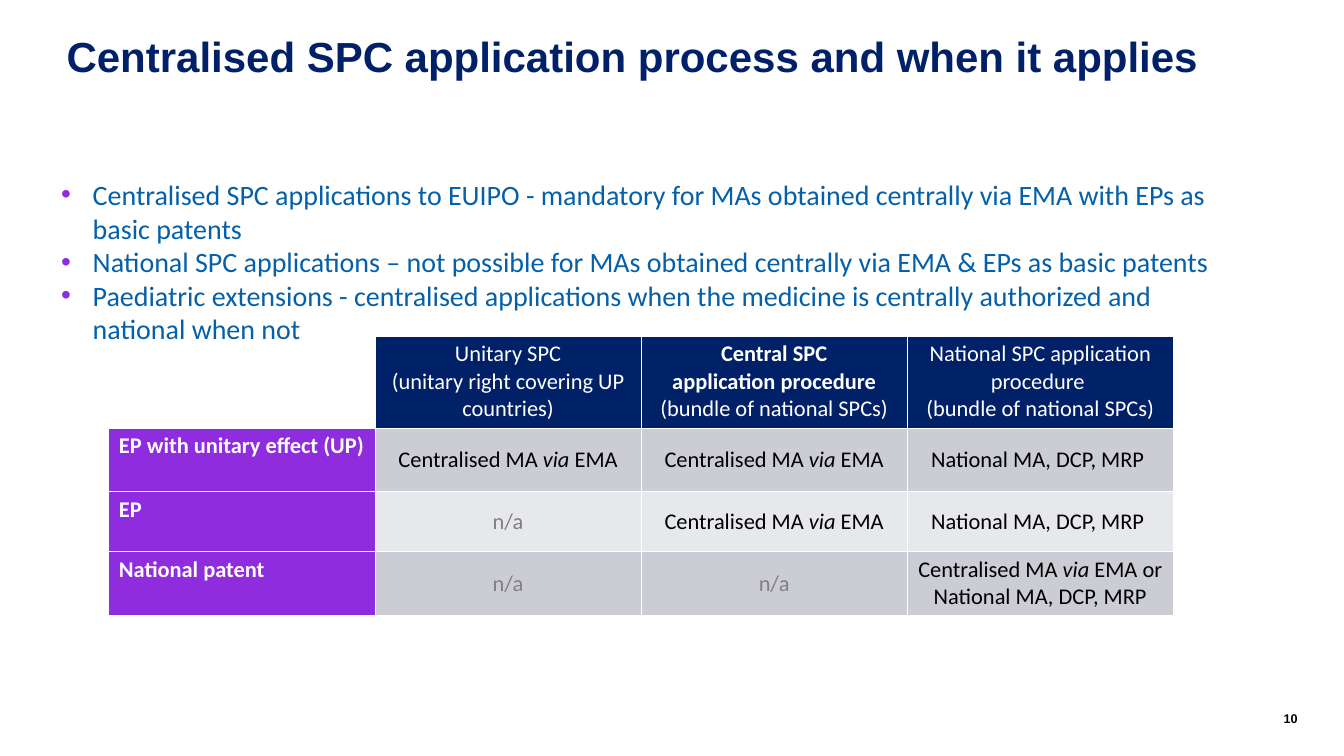
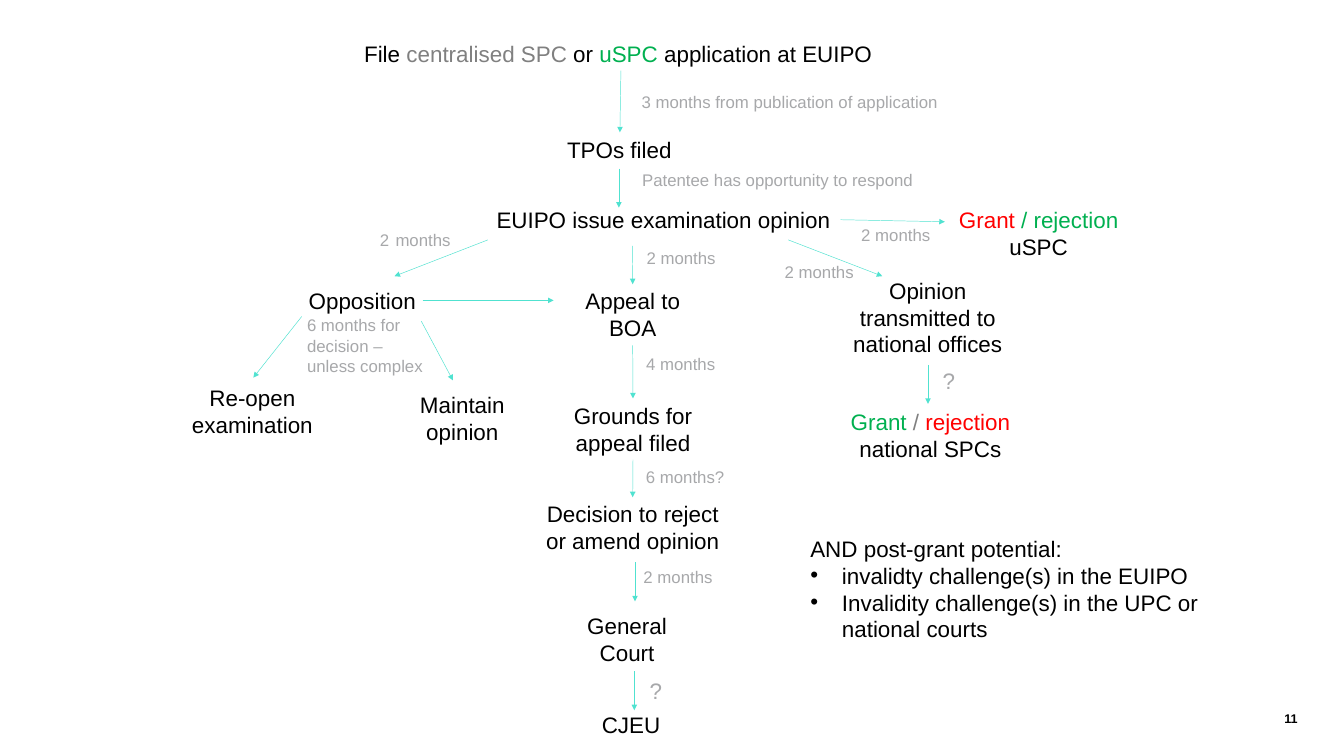
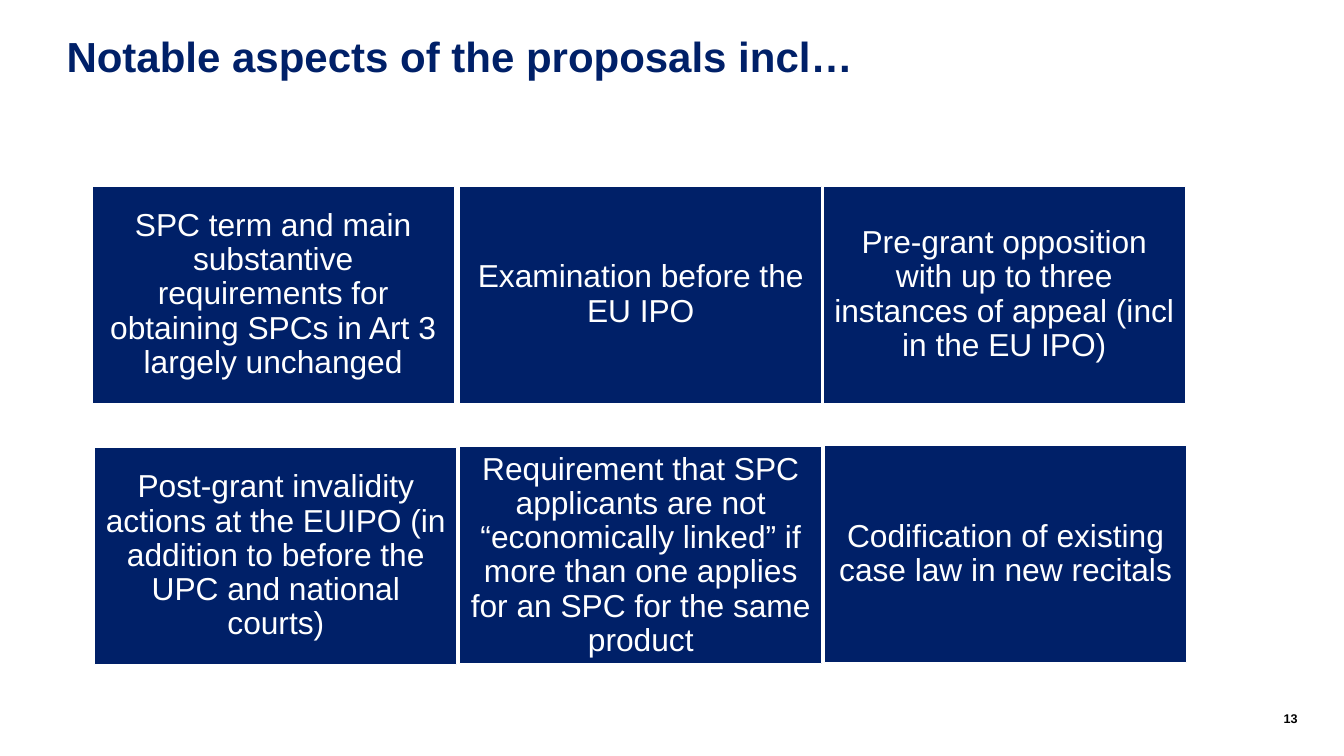
from dataclasses import dataclass, replace
from typing import NamedTuple, Optional

from pptx import Presentation
from pptx.dml.color import RGBColor
from pptx.enum.shapes import MSO_CONNECTOR, MSO_SHAPE
from pptx.enum.text import MSO_ANCHOR, MSO_AUTO_SIZE, PP_ALIGN
from pptx.oxml import parse_xml
from pptx.oxml.ns import nsdecls, qn
from pptx.util import Inches, Pt

NAVY = RGBColor(0x00, 0x20, 0x68)
BLUE = RGBColor(0x04, 0x60, 0xA9)
PURPLE = RGBColor(0x8F, 0x2D, 0xDE)
TURQUOISE = RGBColor(0x50, 0xE2, 0xD0)
GREEN = RGBColor(0x00, 0xB0, 0x50)
RED = RGBColor(0xFF, 0x00, 0x00)
GREY = RGBColor(0x80, 0x80, 0x80)
LABEL_GREY = RGBColor(0xA7, 0xA8, 0xAA)
DARK_BAND = RGBColor(0xCC, 0xCD, 0xD4)
LIGHT_BAND = RGBColor(0xE7, 0xE8, 0xEB)
BLACK = RGBColor(0x00, 0x00, 0x00)
WHITE = RGBColor(0xFF, 0xFF, 0xFF)

TITLE_AND_CONTENT, TITLE_ONLY, BLANK = 1, 5, 6
TOP, LEFT, BOTTOM, RIGHT = range(4)
BULLET_INDENT = Inches(0.47)


@dataclass(frozen=True)
class TextStyle:
    size: float
    color: RGBColor
    font: str = "Arial"
    bold: bool = False
    alignment: PP_ALIGN = PP_ALIGN.LEFT
    line_spacing: float = 1.0
    bullet: Optional[RGBColor] = None


class Run(NamedTuple):
    text: str
    color: Optional[RGBColor] = None
    bold: Optional[bool] = None
    italic: Optional[bool] = None
    size: Optional[float] = None


class Box(NamedTuple):
    left: float
    top: float
    width: float
    height: float


class Step(NamedTuple):
    box: Box
    runs: list
    wrap: bool = True


class Label(NamedTuple):
    box: Box
    runs: list
    style: TextStyle


class Joint(NamedTuple):
    step: str
    side: int


class Point(NamedTuple):
    x: float
    y: float


class Arrow(NamedTuple):
    start: Joint | Point
    end: Joint | Point


class Cell(NamedTuple):
    paragraphs: list
    style: TextStyle


TITLE = TextStyle(45, NAVY, bold=True, line_spacing=0.95)
PAGE_NUMBER = TextStyle(13.5, BLACK, bold=True, alignment=PP_ALIGN.RIGHT)
BODY = TextStyle(30, BLUE, "Calibri", bullet=PURPLE)
HEADER = TextStyle(24, WHITE, "Calibri", alignment=PP_ALIGN.CENTER)
ROW_HEADING = replace(HEADER, bold=True, alignment=PP_ALIGN.LEFT)
VALUE = replace(HEADER, color=BLACK)
UNAVAILABLE = replace(HEADER, color=GREY)
STEP = TextStyle(24, BLACK, alignment=PP_ALIGN.CENTER)
PLAIN = replace(STEP, alignment=PP_ALIGN.LEFT)
LIST = replace(PLAIN, bullet=BLACK)
DURATION = TextStyle(18, LABEL_GREY, alignment=PP_ALIGN.CENTER)
DURATION_NOTE = replace(DURATION, alignment=PP_ALIGN.LEFT)
UNKNOWN = replace(DURATION, size=24)
CARD = TextStyle(34, WHITE, alignment=PP_ALIGN.CENTER, line_spacing=0.9)

BODY_LINES = [
    "Centralised SPC applications to EUIPO - mandatory for MAs obtained centrally via EMA with EPs as basic patents",
    "National SPC applications – not possible for MAs obtained centrally via EMA & EPs as basic patents",
    "Paediatric extensions - centralised applications when the medicine is centrally authorized and national when not",
]

CENTRALISED = [Run("Centralised MA "), Run("via", italic=True), Run(" EMA")]
CENTRAL_CELL = Cell([CENTRALISED], VALUE)
NATIONAL_CELL = Cell([[Run("National MA, DCP, MRP ")]], VALUE)
NOT_APPLICABLE = Cell([[Run("n/a")]], UNAVAILABLE)
EITHER_CELL = Cell(
    [[*CENTRALISED[:2], Run(" EMA or")], [Run("National MA, DCP, MRP")]], VALUE
)
TABLE_HEADER = [
    Cell([[Run("Unitary SPC")], [Run("(unitary right covering UP countries)")]], HEADER),
    Cell(
        [
            [Run("Central SPC", bold=True)],
            [Run("application procedure ", bold=True), Run("(bundle of national SPCs)")],
        ],
        HEADER,
    ),
    Cell(
        [[Run("National SPC application procedure ")], [Run("(bundle of national SPCs)")]],
        HEADER,
    ),
]
TABLE_ROWS = [
    ("EP with unitary effect (UP)", [CENTRAL_CELL, CENTRAL_CELL, NATIONAL_CELL]),
    ("EP", [NOT_APPLICABLE, CENTRAL_CELL, NATIONAL_CELL]),
    ("National patent", [NOT_APPLICABLE, NOT_APPLICABLE, EITHER_CELL]),
]
ROW_HEIGHTS = [1.37, 0.95, 0.89, 0.95]
COLUMN_WIDTH = 3.96

STEPS = {
    "file": Step(
        Box(5.32, 0.55, 7.84, 0.5),
        [
            Run("File "),
            Run("centralised SPC ", GREY),
            Run("or "),
            Run("uSPC", GREEN),
            Run(" application at EUIPO"),
        ],
        wrap=False,
    ),
    "observations": Step(Box(8.34, 1.97, 1.77, 0.5), [Run("TPOs filed")], wrap=False),
    "examination": Step(
        Box(7.29, 3.02, 5.22, 0.5), [Run("EUIPO issue examination opinion")], wrap=False
    ),
    "appeal": Step(Box(8.37, 4.23, 2.09, 0.91), [Run("Appeal to BOA")]),
    "transmission": Step(
        Box(12.53, 4.07, 2.55, 1.31), [Run("Opinion transmitted to national offices")]
    ),
    "opposition": Step(Box(4.44, 4.23, 1.9, 0.5), [Run("Opposition")]),
    "grounds": Step(Box(8.15, 5.93, 2.54, 0.91), [Run("Grounds for appeal filed")]),
    "national result": Step(
        Box(12.43, 6.02, 2.83, 0.91),
        [Run("Grant", GREEN), Run(" / ", GREY), Run("rejection ", RED), Run("national SPCs")],
    ),
    "reopen": Step(Box(2.54, 5.67, 2.43, 0.91), [Run("Re-open examination")]),
    "decision": Step(
        Box(7.95, 7.4, 2.93, 0.91), [Run("Decision to reject or amend opinion")]
    ),
    "general court": Step(Box(8.57, 9.06, 1.52, 0.91), [Run("General Court")]),
    "final court": Step(Box(8.63, 10.54, 1.52, 0.5), [Run("CJEU")]),
    "unitary result": Step(
        Box(14.03, 3.02, 2.85, 0.91),
        [Run("Grant", RED), Run(" / rejection ", GREEN), Run("uSPC")],
    ),
    "maintain": Step(Box(6, 5.77, 1.76, 0.91), [Run("Maintain opinion")]),
}

ARROWS = [
    Arrow(Joint("file", BOTTOM), Joint("observations", TOP)),
    Arrow(Point(9.21, 2.51), Point(9.21, 3.09)),
    Arrow(Point(9.41, 3.66), Joint("appeal", TOP)),
    Arrow(Point(11.73, 3.57), Point(13.13, 4.11)),
    Arrow(Point(7.26, 3.57), Point(5.87, 4.11)),
    Arrow(Joint("appeal", BOTTOM), Joint("grounds", TOP)),
    Arrow(Point(4.49, 4.71), Point(3.77, 5.62)),
    Arrow(Point(6.29, 4.47), Point(8.24, 4.47)),
    Arrow(Joint("grounds", BOTTOM), Joint("decision", TOP)),
    Arrow(Point(9.45, 8.37), Point(9.45, 8.95)),
    Arrow(Point(9.44, 9.99), Point(9.44, 10.57)),
    Arrow(Point(13.81, 5.43), Point(13.81, 6.01)),
    Arrow(Joint("examination", RIGHT), Point(14.06, 3.3)),
    Arrow(Point(6.27, 4.78), Point(6.74, 5.66)),
]

LABELS = [
    Label(Box(9.25, 1.31, 5, 0.4), [Run("3 months from publication of application")], DURATION),
    Label(Box(7.76, 2.48, 7.62, 0.4), [Run("Patentee has opportunity to respond")], DURATION),
    Label(Box(12.63, 3.29, 1.4, 0.4), [Run("2 months")], DURATION),
    Label(Box(9.44, 3.64, 1.39, 0.4), [Run("2 months")], DURATION),
    Label(Box(11.49, 3.85, 1.4, 0.4), [Run("2 months")], DURATION),
    Label(Box(5.48, 3.28, 1.4, 0.5), [Run("2"), Run(" ", size=24), Run("months")], DURATION),
    Label(Box(9.43, 5.22, 1.4, 0.4), [Run("4 months")], DURATION),
    Label(Box(9.39, 6.89, 1.61, 0.4), [Run("6 months?")], DURATION),
    Label(Box(9.39, 8.38, 1.4, 0.4), [Run("2 months")], DURATION),
    Label(Box(13.42, 5.42, 1.4, 0.5), [Run("?")], UNKNOWN),
    Label(Box(9.06, 10.02, 1.4, 0.5), [Run("?")], UNKNOWN),
    Label(
        Box(4.47, 4.64, 2.11, 1.01),
        [Run("6 months for decision – unless complex")],
        DURATION_NOTE,
    ),
]

POST_GRANT_CHALLENGES = [
    "invalidty challenge(s) in the EUIPO",
    "Invalidity challenge(s) in the UPC or national courts",
]

CARD_WIDTH, CARD_HEIGHT = 5.39, 3.23
CARDS = [
    (1.37, 2.77, "SPC term and main substantive requirements for obtaining SPCs in Art 3 largely unchanged"),
    (6.84, 2.77, "Examination before the EU IPO"),
    (12.25, 2.77, "Pre-grant opposition with up to three instances of appeal (incl in the EU IPO)"),
    (1.41, 6.66, "Post-grant invalidity actions at the EUIPO (in addition to before the UPC and national courts)"),
    (6.84, 6.65, "Requirement that SPC applicants are not “economically linked” if more than one applies for an SPC for the same product"),
    (12.27, 6.63, "Codification of existing case law in new recitals"),
]


def to_inches(box: Box) -> list:
    return [Inches(length) for length in box]


def place(shape, box: Box) -> None:
    shape.left, shape.top, shape.width, shape.height = to_inches(box)


def set_margins(target, horizontal: float, vertical: float) -> None:
    target.margin_left = target.margin_right = Inches(horizontal)
    target.margin_top = target.margin_bottom = Inches(vertical)


def add_bullet(paragraph, color: RGBColor) -> None:
    properties = paragraph._p.get_or_add_pPr()
    properties.set("marL", str(BULLET_INDENT))
    properties.set("indent", str(-BULLET_INDENT))
    for xml in (
        f'<a:buClr {nsdecls("a")}><a:srgbClr val="{color}"/></a:buClr>',
        f'<a:buFont {nsdecls("a")} typeface="Arial"/>',
        f'<a:buChar {nsdecls("a")} char="•"/>',
    ):
        properties.append(parse_xml(xml))


def write_paragraph(paragraph, runs: list, style: TextStyle) -> None:
    paragraph.alignment = style.alignment
    paragraph.line_spacing = style.line_spacing
    paragraph.space_before = Pt(0)
    if style.bullet is not None:
        add_bullet(paragraph, style.bullet)
    font = paragraph.font
    font.name, font.size, font.bold = style.font, Pt(style.size), style.bold
    font.color.rgb = style.color
    for item in runs:
        run = paragraph.add_run()
        run.text = item.text
        if item.color is not None:
            run.font.color.rgb = item.color
        if item.bold is not None:
            run.font.bold = item.bold
        if item.italic is not None:
            run.font.italic = item.italic
        if item.size is not None:
            run.font.size = Pt(item.size)


def write_text(frame, paragraphs: list, style: TextStyle) -> None:
    for index, runs in enumerate(paragraphs):
        paragraph = frame.add_paragraph() if index else frame.paragraphs[0]
        write_paragraph(paragraph, runs, style)


def add_text(slide, box: Box, runs: list, style: TextStyle, wrap: bool = True):
    shape = slide.shapes.add_textbox(*to_inches(box))
    frame = shape.text_frame
    frame.word_wrap = wrap
    frame.auto_size = MSO_AUTO_SIZE.SHAPE_TO_FIT_TEXT
    write_text(frame, [runs], style)
    return shape


def fill_placeholder(shape, box: Box, lines: list, style: TextStyle) -> None:
    place(shape, box)
    frame = shape.text_frame
    frame.auto_size = MSO_AUTO_SIZE.NONE
    frame.vertical_anchor = MSO_ANCHOR.TOP
    set_margins(frame, 0, 0)
    write_text(frame, [[Run(line)] for line in lines], style)


def add_slide(presentation, layout: int, number: int, title: str = "", title_width: float = 0):
    slide = presentation.slides.add_slide(presentation.slide_layouts[layout])
    if title:
        fill_placeholder(slide.shapes.title, Box(0.99, 0.51, title_width, 1.75), [title], TITLE)
    page = add_text(slide, Box(18.55, 10.58, 0.76, 0.3), [Run(str(number))], PAGE_NUMBER)
    page.text_frame.auto_size = MSO_AUTO_SIZE.NONE
    set_margins(page.text_frame, 0, 0)
    return slide


def add_borders(cell, visible_sides: str = "LRTB") -> None:
    properties = cell._tc.get_or_add_tcPr()
    white_fill = f'<a:solidFill><a:srgbClr val="{WHITE}"/></a:solidFill>'
    for side in "LRTB":
        fill = white_fill if side in visible_sides else "<a:noFill/>"
        properties.append(
            parse_xml(f'<a:ln{side} {nsdecls("a")} w="{Pt(1)}">{fill}</a:ln{side}>')
        )


def format_cell(cell, content: Cell, fill: RGBColor, anchor: MSO_ANCHOR) -> None:
    set_margins(cell, 0.15, 0.07)
    cell.vertical_anchor = anchor
    add_borders(cell)
    cell.fill.solid()
    cell.fill.fore_color.rgb = fill
    write_text(cell.text_frame, content.paragraphs, content.style)


def add_procedure_table(slide) -> None:
    columns = len(TABLE_HEADER) + 1
    box = Box(1.62, 5, columns * COLUMN_WIDTH, sum(ROW_HEIGHTS))
    table = slide.shapes.add_table(len(ROW_HEIGHTS), columns, *to_inches(box)).table
    table.first_row = table.horz_banding = False
    for column in table.columns:
        column.width = Inches(COLUMN_WIDTH)
    for row, height in zip(table.rows, ROW_HEIGHTS):
        row.height = Inches(height)
    corner = table.cell(0, 0)
    add_borders(corner, "RB")
    corner.fill.background()
    for column, content in enumerate(TABLE_HEADER, 1):
        format_cell(table.cell(0, column), content, NAVY, MSO_ANCHOR.TOP)
    for row, (heading, values) in enumerate(TABLE_ROWS, 1):
        heading_cell = Cell([[Run(heading)]], ROW_HEADING)
        format_cell(table.cell(row, 0), heading_cell, PURPLE, MSO_ANCHOR.TOP)
        band = DARK_BAND if row % 2 else LIGHT_BAND
        for column, content in enumerate(values, 1):
            format_cell(table.cell(row, column), content, band, MSO_ANCHOR.MIDDLE)


def add_arrow(slide, arrow: Arrow, step_shapes: dict) -> None:
    points = [Point(0, 0) if isinstance(end, Joint) else end for end in arrow]
    coordinates = [Inches(value) for point in points for value in point]
    connector = slide.shapes.add_connector(MSO_CONNECTOR.STRAIGHT, *coordinates)
    for end, connect in zip(arrow, (connector.begin_connect, connector.end_connect)):
        if isinstance(end, Joint):
            connect(step_shapes[end.step], end.side)
    connector.line.color.rgb = TURQUOISE
    connector.line.width = Pt(0.5)
    properties = connector.element.spPr
    properties.find(qn("a:ln")).append(parse_xml(f'<a:tailEnd {nsdecls("a")} type="triangle"/>'))
    properties.append(parse_xml(f'<a:effectLst {nsdecls("a")}/>'))


def build_application_slide(presentation) -> None:
    title = "Centralised SPC application process and when it applies"
    slide = add_slide(presentation, TITLE_AND_CONTENT, 10, title, 17.02)
    fill_placeholder(slide.placeholders[1], Box(0.91, 2.64, 17.25, 7.44), BODY_LINES, BODY)
    add_procedure_table(slide)


def build_procedure_slide(presentation) -> None:
    slide = add_slide(presentation, BLANK, 11)
    step_shapes = {
        name: add_text(slide, step.box, step.runs, STEP if step.wrap else PLAIN, step.wrap)
        for name, step in STEPS.items()
    }
    for arrow in ARROWS:
        add_arrow(slide, arrow, step_shapes)
    for label in LABELS:
        add_text(slide, label.box, label.runs, label.style)
    post_grant = add_text(
        slide, Box(11.96, 7.91, 6.92, 2.12), [Run("AND post-grant potential:")], PLAIN
    )
    for challenge in POST_GRANT_CHALLENGES:
        write_paragraph(post_grant.text_frame.add_paragraph(), [Run(challenge)], LIST)


def build_aspects_slide(presentation) -> None:
    slide = add_slide(presentation, TITLE_ONLY, 13, "Notable aspects of the proposals incl…", 12.08)
    for left, top, text in CARDS:
        box = Box(left, top, CARD_WIDTH, CARD_HEIGHT)
        card = slide.shapes.add_shape(MSO_SHAPE.RECTANGLE, *to_inches(box))
        card.shadow.inherit = False
        card.fill.solid()
        card.fill.fore_color.rgb = NAVY
        card.line.color.rgb = WHITE
        card.line.width = Pt(1)
        card.text_frame.word_wrap = True
        card.text_frame.vertical_anchor = MSO_ANCHOR.MIDDLE
        set_margins(card.text_frame, 0.14, 0.14)
        write_text(card.text_frame, [[Run(text)]], CARD)


def main() -> None:
    presentation = Presentation()
    presentation.slide_width, presentation.slide_height = Inches(20), Inches(11.25)
    build_application_slide(presentation)
    build_procedure_slide(presentation)
    build_aspects_slide(presentation)
    presentation.save("out.pptx")


if __name__ == "__main__":
    main()
